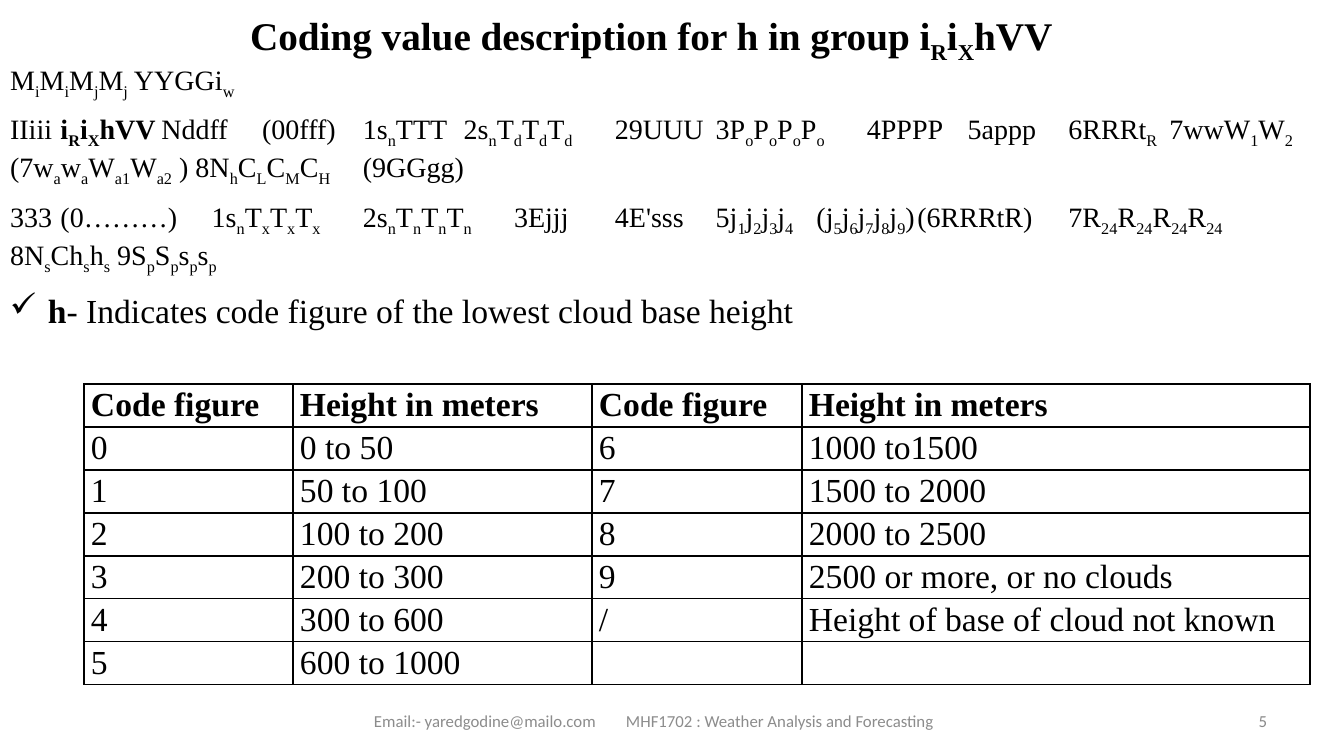
from lxml.etree import SubElement
from pptx import Presentation
from pptx.dml.color import RGBColor
from pptx.enum.text import MSO_ANCHOR as Anchor, MSO_AUTO_SIZE as AutoSize, PP_ALIGN as Align
from pptx.oxml.ns import qn
from pptx.util import Pt

PX = 9144000 / 1008  # EMU per px
BLACK = RGBColor(0, 0, 0)
FOOTER_GRAY = RGBColor(0x8C, 0x8C, 0x8C)
NUMBER_GRAY = RGBColor(0x89, 0x89, 0x89)
SERIF, SANS = "Times New Roman", "Calibri"

# Content: [x] is subscript, *x* is bold
TITLE = "*Coding value description for h in group i[R]i[X]hVV*"
# Each code line: its groups, then the tab stops in px
CODE_LINES = [
    (["M[i]M[i]M[j]M[j] YYGGi[w]"], []),
    (["IIiii", "*i[R]i[X]hVV*", "Nddff", "(00fff)", "1s[n]TTT", "2s[n]T[d]T[d]T[d]",
      "29UUU", "3P[o]P[o]P[o]P[o]", "4PPPP", "5appp", "6RRRt[R]",
      "7wwW[1]W[2] (7w[a]w[a]W[a1]W[a2] ) 8N[h]C[L]C[M]C[H]", "(9GGgg)"],
     [83, 206, 292, 355, 388, 499, 622, 725, 861, 963, 1045, 1173]),
    (["333", "(0………)", "1s[n]T[x]T[x]T[x]", "2s[n]T[n]T[n]T[n]", "3Ejjj", "4E'sss",
      "5j[1]j[2]j[3]j[4]", "(j[5]j[6]j[7]j[8]j[9])", "(6RRRtR)",
      "7R[24]R[24]R[24]R[24]", "8N[s]Ch[s]h[s] 9S[p]S[p]s[p]s[p]"],
     [77, 220, 356, 491, 580, 683, 769, 877, 1019, 1189]),
]
DEFINITION = "*h*- Indicates code figure of the lowest cloud base height"
HEIGHT_ROWS = [
    ("*Code figure*", "*Height in meters*", "*Code figure*", "*Height in meters*"),
    ("0", "0 to 50", "6", "1000 to1500"),
    ("1", "50 to 100", "7", "1500 to 2000"),
    ("2", "100 to 200", "8", "2000 to 2500"),
    ("3", "200 to 300", "9", "2500 or more, or no clouds"),
    ("4", "300 to 600", "/", "Height of base of cloud not known"),
    ("5", "600 to 1000", "", ""),
]
COLUMN_WIDTHS = [209, 299, 210, 508]
ROW_HEIGHT = 43
FOOTER = ["Email:- yaredgodine@mailo.com", "MHF1702 : Weather Analysis and Forecasting"]
PAGE_NUMBER = "5"


def px(length):
    return round(length * PX)


def write(paragraph, text, size=24, font=SERIF, color=BLACK, align=Align.LEFT,
          after=0, line=1.0, bullet=None, indent=0, tabs=()):
    """Fill a paragraph, reading the bold and subscript marks."""
    properties = paragraph._p.get_or_add_pPr()
    properties.set("marL", str(px(indent)))
    properties.set("indent", str(-px(indent)))
    if bullet:
        SubElement(properties, qn("a:buChar")).set("char", bullet)
    else:
        SubElement(properties, qn("a:buNone"))
    if tabs:
        tab_list = SubElement(properties, qn("a:tabLst"))
        for stop in tabs:
            SubElement(tab_list, qn("a:tab"), pos=str(px(stop)), algn="l")
    paragraph.alignment = align
    paragraph.space_before = Pt(0)
    paragraph.space_after = Pt(after)
    paragraph.line_spacing = line
    for chunk_index, chunk in enumerate(text.split("*")):
        for piece_index, piece in enumerate(chunk.replace("]", "[").split("[")):
            if not piece:
                continue
            run = paragraph.add_run()
            run.text = piece
            run.font.name = font
            run.font.size = Pt(size)
            run.font.color.rgb = color
            run.font.bold = chunk_index % 2 == 1
            if piece_index % 2:
                run.font._element.set("baseline", "-25000")


def place(shape, left, top, width, height, anchor=Anchor.TOP, wrap=True):
    """Put a text shape on the slide and return its frame."""
    shape.left, shape.top = px(left), px(top)
    shape.width, shape.height = px(width), px(height)
    frame = shape.text_frame
    frame.auto_size = AutoSize.NONE
    frame.word_wrap = wrap
    frame.vertical_anchor = anchor
    return frame


def add_box(slide, *box, **options):
    return place(slide.shapes.add_textbox(0, 0, 0, 0), *box, **options)


def add_borders(cell):
    properties = cell._tc.get_or_add_tcPr()
    for side in ("lnL", "lnR", "lnT", "lnB"):
        border = SubElement(properties, qn(f"a:{side}"), w=str(Pt(1)))
        fill = SubElement(border, qn("a:solidFill"))
        SubElement(fill, qn("a:srgbClr"), val=str(BLACK))


def add_height_table(slide, left, top):
    table = slide.shapes.add_table(
        len(HEIGHT_ROWS), len(COLUMN_WIDTHS), px(left), px(top),
        px(sum(COLUMN_WIDTHS)), px(ROW_HEIGHT * len(HEIGHT_ROWS))).table
    table.first_row = table.horz_banding = False
    for column, width in zip(table.columns, COLUMN_WIDTHS):
        column.width = px(width)
    for row, texts in zip(table.rows, HEIGHT_ROWS):
        row.height = px(ROW_HEIGHT)
        for cell, text in zip(row.cells, texts):
            add_borders(cell)
            cell.fill.background()
            cell.margin_left = cell.margin_right = px(7)
            cell.margin_top = cell.margin_bottom = 0
            write(cell.text_frame.paragraphs[0], text, line=1.07)


def main():
    presentation = Presentation()
    presentation.slide_width, presentation.slide_height = px(1344), px(756)
    slide = presentation.slides.add_slide(presentation.slide_layouts[1])

    # Title
    frame = place(slide.shapes.title, 240, 6, 854, 57, wrap=False)
    write(frame.paragraphs[0], TITLE, size=28)

    # Code groups
    frame = place(slide.placeholders[1], 0, 57, 1328, 203)
    for index, (groups, stops) in enumerate(CODE_LINES):
        paragraph = frame.add_paragraph() if index else frame.paragraphs[0]
        write(paragraph, "\t".join(groups), size=20, align=Align.JUSTIFY, after=8, tabs=stops)

    # Definition of h
    frame = add_box(slide, 0, 285, 832, 50)
    write(frame.paragraphs[0], DEFINITION, bullet="✓", indent=38)

    # Cloud base heights
    add_height_table(slide, 84, 384)

    # Footer and page number
    frame = add_box(slide, 242, 701, 857, 40, anchor=Anchor.MIDDLE)
    frame.margin_left = px(132)
    write(frame.paragraphs[0], "\t".join(FOOTER), size=12, font=SANS, color=FOOTER_GRAY, tabs=[275])
    frame = add_box(slide, 964, 701, 313, 40, anchor=Anchor.MIDDLE)
    write(frame.paragraphs[0], PAGE_NUMBER, size=12, font=SANS, color=NUMBER_GRAY, align=Align.RIGHT)

    presentation.save("out.pptx")


if __name__ == "__main__":
    main()
